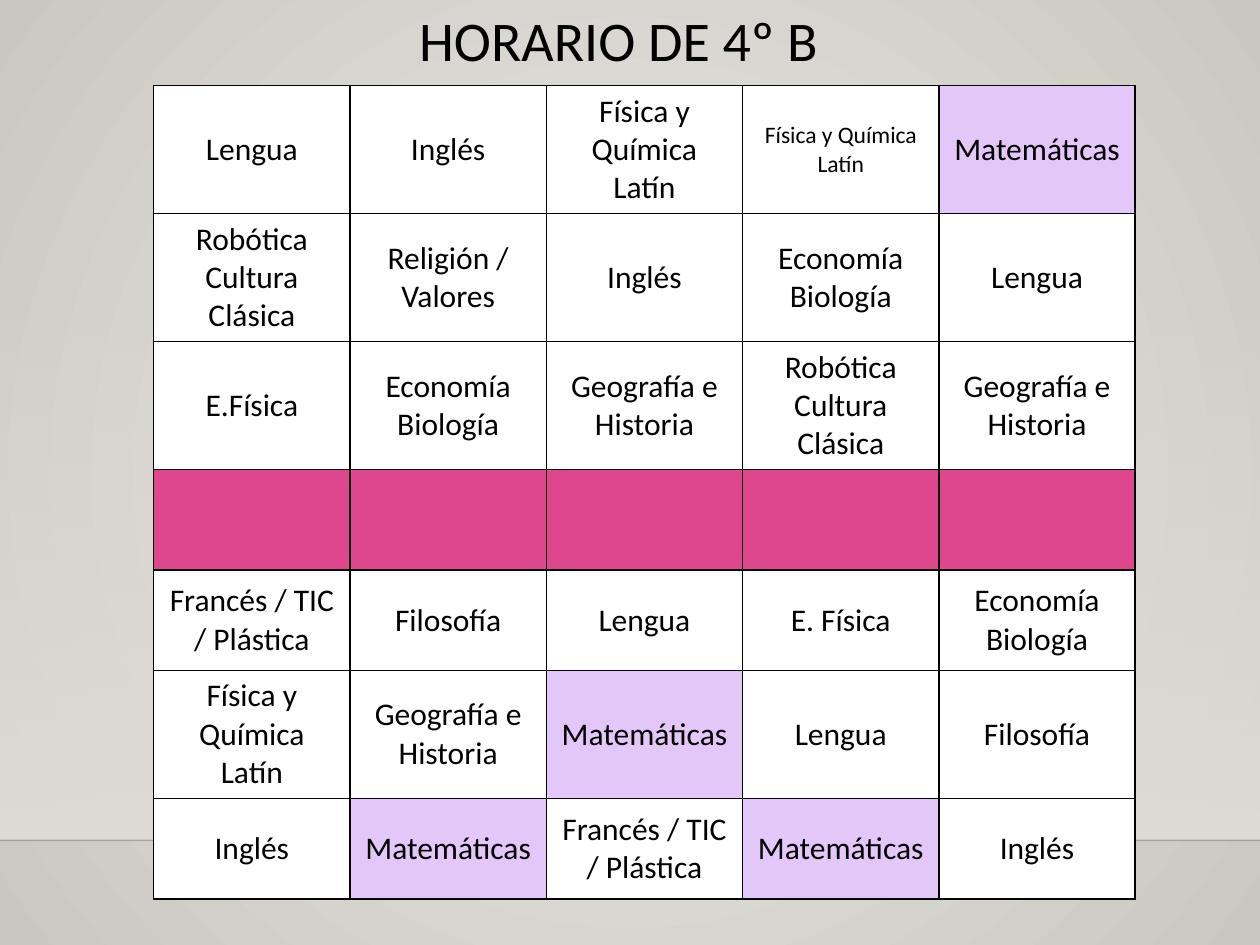
from dataclasses import dataclass

from lxml import etree
from pptx import Presentation
from pptx.dml.color import RGBColor
from pptx.enum.shapes import MSO_CONNECTOR, MSO_SHAPE
from pptx.enum.text import MSO_ANCHOR, MSO_AUTO_SIZE, PP_ALIGN
from pptx.oxml.ns import qn
from pptx.util import Inches, Pt

CENTER = PP_ALIGN.CENTER
TOP, MIDDLE = MSO_ANCHOR.TOP, MSO_ANCHOR.MIDDLE
NO_AUTOFIT = MSO_AUTO_SIZE.NONE
RECTANGLE = MSO_SHAPE.RECTANGLE
STRAIGHT = MSO_CONNECTOR.STRAIGHT
TITLE_ONLY = 5


@dataclass(frozen=True)
class Theme:
    font: str = "Calibri"
    title_size: float = 32
    subject_size: float = 18
    small_size: float = 13.5
    text: str = "000000"
    floor_line: str = "000001"
    center: str = "ECEAE7"
    edge: str = "CAC7C1"
    wall: str = "DFDBD5"
    plain: str = "FFFFFF"
    maths: str = "E4C7F9"
    recess: str = "DE478E"


MATHS = "Matemáticas"
PHYSICS = "Física y Química\nLatín"
ROBOTICS = "Robótica\nCultura Clásica"
ECONOMICS = "Economía\nBiología"
GEOGRAPHY = "Geografía e Historia"
FRENCH = "Francés / TIC / Plástica"
RECESS = [""] * 5
TIMETABLE = [
    ["Lengua", "Inglés", PHYSICS, PHYSICS, MATHS],
    [ROBOTICS, "Religión / Valores", "Inglés", ECONOMICS, "Lengua"],
    ["E.Física", ECONOMICS, GEOGRAPHY, ROBOTICS, GEOGRAPHY],
    RECESS,
    [FRENCH, "Filosofía", "Lengua", "E. Física", ECONOMICS],
    [PHYSICS, GEOGRAPHY, MATHS, "Lengua", "Filosofía"],
    ["Inglés", MATHS, FRENCH, MATHS, "Inglés"],
]
SMALL_CELL = (0, 3)


class SlideBuilder:
    def __init__(self, slide, theme):
        self.slide = slide
        self.theme = theme

    def gradient(self, fill, colors):
        fill.gradient()
        for stop, position, color in zip(fill.gradient_stops, (0, 1), colors):
            stop.position = position
            stop.color.rgb = RGBColor.from_string(color)

    def set_alpha(self, color, percent):
        etree.SubElement(color, qn("a:alpha")).set("val", str(percent * 1000))

    def format_paragraph(self, paragraph, size):
        paragraph.alignment = CENTER
        paragraph.font.name = self.theme.font
        paragraph.font.size = Pt(size)
        paragraph.font.color.rgb = RGBColor.from_string(self.theme.text)

    def background(self):
        self.gradient(self.slide.background.fill, (self.theme.center, self.theme.edge))
        gradient = self.slide.element.find(".//" + qn("a:gradFill"))
        gradient.remove(gradient.find(qn("a:lin")))
        radial = etree.SubElement(gradient, qn("a:path"))
        radial.set("path", "circle")
        focus = etree.SubElement(radial, qn("a:fillToRect"))
        for side in "ltrb":
            focus.set(side, "50000")

    def wall(self, left, top, width, height):
        wall = self.slide.shapes.add_shape(
            RECTANGLE, Inches(left), Inches(top), Inches(width), Inches(height))
        wall.shadow.inherit = False
        wall.line.fill.background()
        self.gradient(wall.fill, (self.theme.wall, self.theme.wall))
        wall.fill.gradient_angle = 270
        self.set_alpha(wall.element.spPr.find(".//" + qn("a:srgbClr")), 0)

    def floor_line(self, left, right, height):
        floor = self.slide.shapes.add_connector(
            STRAIGHT, Inches(left), Inches(height), Inches(right), Inches(height))
        floor.line.width = Pt(1)
        floor.line.color.rgb = RGBColor.from_string(self.theme.floor_line)
        properties = floor.element.spPr
        self.set_alpha(properties.find(".//" + qn("a:srgbClr")), 20)
        etree.SubElement(properties, qn("a:effectLst"))

    def title(self, text, left, top, width, height):
        title = self.slide.shapes.title
        title.left, title.top = Inches(left), Inches(top)
        title.width, title.height = Inches(width), Inches(height)
        frame = title.text_frame
        frame.text = text
        frame.word_wrap = True
        frame.auto_size = NO_AUTOFIT
        frame.vertical_anchor = TOP
        heading = frame.paragraphs[0]
        heading.line_spacing = 0.9
        self.format_paragraph(heading, self.theme.title_size)

    def borders(self, cell):
        properties = cell._tc.get_or_add_tcPr()
        for index, side in enumerate(("lnL", "lnR", "lnT", "lnB")):
            border = etree.Element(qn("a:" + side), w=str(Pt(1)))
            ink = etree.SubElement(border, qn("a:solidFill"))
            etree.SubElement(ink, qn("a:srgbClr")).set("val", self.theme.text)
            properties.insert(index, border)

    def subject_cell(self, cell, subject, size):
        fills = {"": self.theme.recess, MATHS: self.theme.maths}
        cell.fill.solid()
        cell.fill.fore_color.rgb = RGBColor.from_string(
            fills.get(subject, self.theme.plain))
        cell.vertical_anchor = MIDDLE
        cell.text_frame.text = subject
        for paragraph in cell.text_frame.paragraphs:
            self.format_paragraph(paragraph, size)
        self.borders(cell)

    def timetable(self, lessons, left, top, width, height):
        table = self.slide.shapes.add_table(
            len(lessons), len(lessons[0]),
            Inches(left), Inches(top), Inches(width), Inches(height)).table
        table.first_row = table.horz_banding = False
        for row, subjects in enumerate(lessons):
            for column, subject in enumerate(subjects):
                small = (row, column) == SMALL_CELL
                size = self.theme.small_size if small else self.theme.subject_size
                self.subject_cell(table.cell(row, column), subject, size)


def main():
    presentation = Presentation()
    presentation.slide_width = Inches(10)
    presentation.slide_height = Inches(7.5)
    slide = presentation.slides.add_slide(presentation.slide_layouts[TITLE_ONLY])
    builder = SlideBuilder(slide, Theme())
    builder.background()
    builder.wall(0, 2.2, 10, 4.46)
    builder.floor_line(0, 10, 6.67)
    builder.title("HORARIO DE 4º B", 0.81, 0.05, 8.2, 1.25)
    builder.timetable(TIMETABLE, 1.22, 0.68, 7.79, 5.58)
    presentation.save("out.pptx")


if __name__ == "__main__":
    main()
